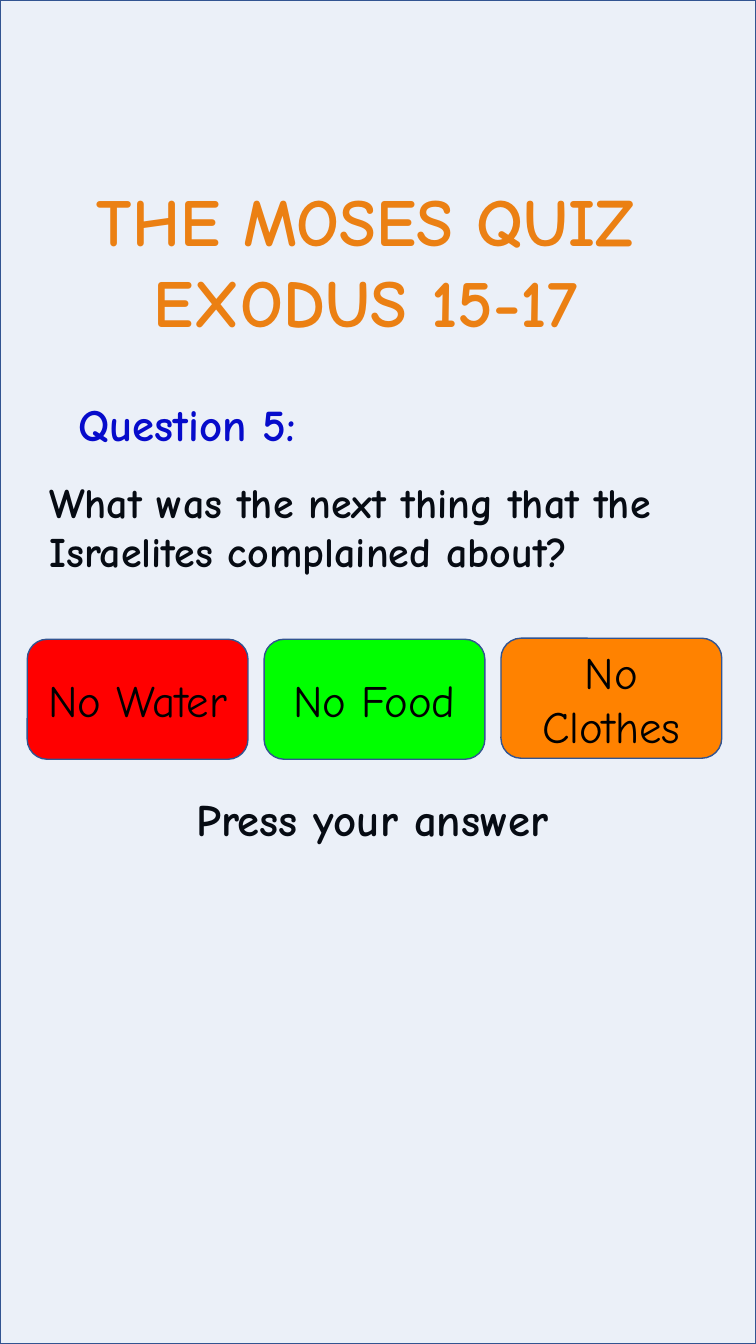
"""Build a tall quiz slide with a question and three answer buttons."""
from lxml.etree import SubElement
from pptx import Presentation
from pptx.dml.color import RGBColor
from pptx.enum.shapes import MSO_SHAPE
from pptx.enum.text import MSO_ANCHOR, MSO_AUTO_SIZE, PP_ALIGN
from pptx.oxml.ns import qn
from pptx.util import Inches, Pt

WIDTH, HEIGHT = 7.5, 13.33
FONT = "Comic Neue"
COLOURS = {
    "orange": "FF8200", "blue": "0000CC", "black": "000000", "red": "FF0000",
    "green": "00FF00", "tint": "4472C4", "border": "325491",
}
TITLE = ["THE MOSES QUIZ ", "EXODUS 15-17 "]
TITLE_BOX = (0.3, 1.73, 6.89, 1.72)
TEXTS = [
    (["Question 5:"], (0.47, 3.89, 2.77, 0.64),
     dict(size=32, colour="blue", align=PP_ALIGN.CENTER, wrap=False)),
    (["What was the next thing that the Israelites complained about?"],
     (0.39, 4.69, 6.92, 1.46), dict(size=30, spacing=Pt(35), before=7.5)),
    (["Press your answer"], (1.85, 7.86, 4.22, 0.72),
     dict(size=32, spacing=0.9, before=7.5)),
]
ANSWERS = [("No Water", "red", 6.34), ("No Food", "green", 6.34), ("No Clothes", "orange", 6.33)]
ANSWER_LEFT, ANSWER_STEP, ANSWER_WIDTH, ANSWER_HEIGHT = 0.27, 2.35, 2.19, 1.19


def rgb(name):
    return RGBColor.from_string(COLOURS[name])


def write(frame, lines, size=32, colour="black", bold=True, align=PP_ALIGN.LEFT,
          anchor=MSO_ANCHOR.TOP, wrap=True, spacing=1.0, before=0):
    frame.auto_size = MSO_AUTO_SIZE.NONE
    frame.word_wrap = wrap
    frame.vertical_anchor = anchor
    for index, line in enumerate(lines):
        para = frame.paragraphs[0] if index == 0 else frame.add_paragraph()
        para.alignment = align
        para.line_spacing = spacing
        para.space_before = Pt(before)
        span = para.add_run()
        span.text = line
        span.font.name = FONT
        span.font.size = Pt(size)
        span.font.bold = bold
        span.font.color.rgb = rgb(colour)


def add_panel(page, kind, place, colour):
    panel = page.shapes.add_shape(kind, *map(Inches, place))
    panel.shadow.inherit = False
    panel.fill.solid()
    panel.fill.fore_color.rgb = rgb(colour)
    panel.line.color.rgb = rgb("border")
    panel.line.width = Pt(1)
    return panel


def main():
    deck = Presentation()
    deck.slide_width, deck.slide_height = Inches(WIDTH), Inches(HEIGHT)
    page = deck.slides.add_slide(deck.slide_layouts[5])

    title = page.shapes.title
    title.left, title.top, title.width, title.height = map(Inches, TITLE_BOX)
    write(title.text_frame, TITLE, size=48, colour="orange", align=PP_ALIGN.CENTER, wrap=False)

    for lines, place, style in TEXTS:
        box = page.shapes.add_textbox(*map(Inches, place))
        write(box.text_frame, lines, **style)

    veil = add_panel(page, MSO_SHAPE.RECTANGLE, (0, 0, WIDTH, HEIGHT), "tint")
    tint = veil.fill._xPr.find(qn("a:solidFill"))[0]
    SubElement(tint, qn("a:alpha"), val="10000")

    for index, (answer, colour, top) in enumerate(ANSWERS):
        place = (ANSWER_LEFT + index * ANSWER_STEP, top, ANSWER_WIDTH, ANSWER_HEIGHT)
        button = add_panel(page, MSO_SHAPE.ROUNDED_RECTANGLE, place, colour)
        write(button.text_frame, [answer], bold=False, align=PP_ALIGN.CENTER,
              anchor=MSO_ANCHOR.MIDDLE)

    deck.save("out.pptx")


if __name__ == "__main__":
    main()
